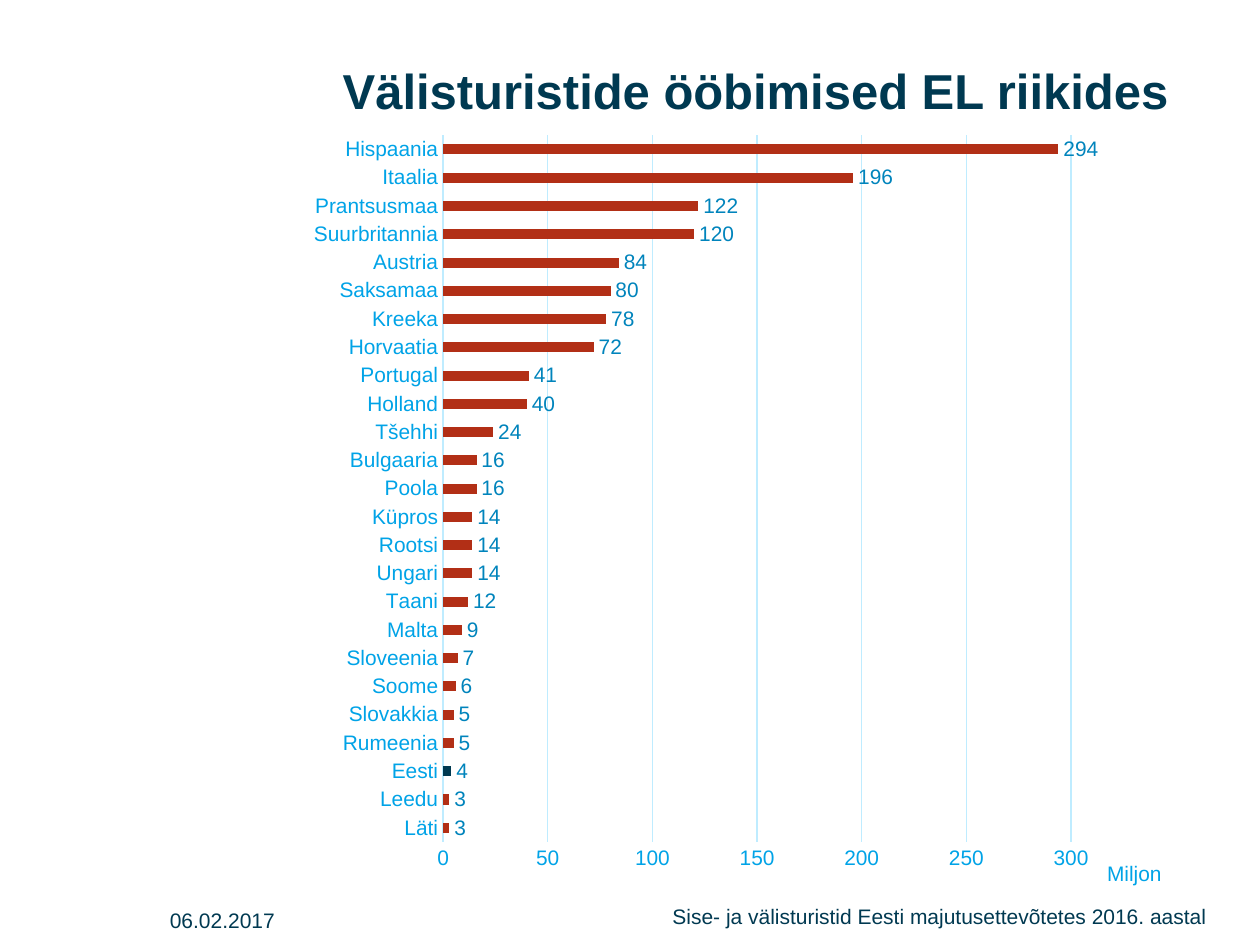
from lxml import etree
from pptx import Presentation
from pptx import util as u
from pptx.chart.data import CategoryChartData
from pptx.dml.color import RGBColor
from pptx.enum import chart as ch, text
from pptx.oxml.ns import nsdecls, qn
from pptx.oxml import parse_xml

NAVY = RGBColor(0x00, 0x39, 0x51)
SKY = RGBColor(0x00, 0xA3, 0xE7)
BLUE = RGBColor(0x00, 0x84, 0xBC)
PALE = RGBColor(0xBF, 0xEC, 0xFF)
RUST = RGBColor(0xB2, 0x2F, 0x16)

NIGHTS = {
    "Läti": 3, "Leedu": 3, "Eesti": 4, "Rumeenia": 5, "Slovakkia": 5,
    "Soome": 6, "Sloveenia": 7, "Malta": 9, "Taani": 12, "Ungari": 14,
    "Rootsi": 14, "Küpros": 14, "Poola": 16, "Bulgaaria": 16, "Tšehhi": 24,
    "Holland": 40, "Portugal": 41, "Horvaatia": 72, "Kreeka": 78,
    "Saksamaa": 80, "Austria": 84, "Suurbritannia": 120, "Prantsusmaa": 122,
    "Itaalia": 196, "Hispaania": 294,
}
HIGHLIGHT = "Eesti"


def set_all(obj, **values):
    for name, value in values.items():
        setattr(obj, name, value)


def manual_layout(x, y, w=None, h=None):
    """Return a c:layout element with positions as fractions of the chart."""
    target = '<c:layoutTarget val="inner"/>' if w else ""
    size = f'<c:w val="{w}"/><c:h val="{h}"/>' if w else ""
    return parse_xml(
        f'<c:layout {nsdecls("c")}><c:manualLayout>{target}'
        '<c:xMode val="edge"/><c:yMode val="edge"/>'
        f'<c:x val="{x}"/><c:y val="{y}"/>{size}</c:manualLayout></c:layout>')


def replace_layout(parent, layout):
    for old in parent.findall(qn("c:layout")):
        parent.remove(old)
    tx = parent.find(qn("c:tx"))
    if tx is not None:
        tx.addnext(layout)
    else:
        parent.insert(0, layout)


class Deck:
    font = "Arial"

    def __init__(self):
        self.prs = Presentation()
        set_all(self.prs, slide_width=u.Inches(10), slide_height=u.Inches(7.5))
        self.s = self.prs.slides.add_slide(self.prs.slide_layouts[5])

    def style(self, font, size, color, bold=False):
        set_all(font, name=self.font, size=u.Pt(size), bold=bold)
        font.color.rgb = color

    def fill_text(self, sp, words, box, size, bold=False, inset=0.0,
                  anchor=text.MSO_ANCHOR.MIDDLE, **paragraph):
        left, top, width, height = map(u.Inches, box)
        set_all(sp, left=left, top=top, width=width, height=height)
        tf = sp.text_frame
        side, edge = u.Inches(inset), u.Inches(inset / 2)
        set_all(tf, word_wrap=True, auto_size=text.MSO_AUTO_SIZE.NONE,
                vertical_anchor=anchor, margin_left=side, margin_right=side,
                margin_top=edge, margin_bottom=edge)
        p = tf.paragraphs[0]
        set_all(p, **{"alignment": text.PP_ALIGN.LEFT, **paragraph})
        r = p.add_run()
        r.text = words
        self.style(r.font, size, NAVY, bold)

    def title(self, words, box):
        self.fill_text(self.s.shapes.title, words, box, 28, bold=True)

    def label(self, words, box, **options):
        sp = self.s.shapes.add_textbox(*map(u.Inches, box))
        self.fill_text(sp, words, box, 12, **options)

    def bar_chart(self, values, box, unit):
        data = CategoryChartData(number_format="0")
        data.categories = list(values)
        data.add_series("Series 1", list(values.values()))
        chart = self.s.shapes.add_chart(
            ch.XL_CHART_TYPE.BAR_CLUSTERED, *map(u.Inches, box), data).chart
        set_all(chart, has_legend=False, has_title=False)
        self.style(chart.font, 10, NAVY)
        replace_layout(chart._chartSpace.chart.plotArea,
                       manual_layout(0.243, 0.025, 0.663, 0.906))
        self.bars(chart.plots[0], list(values).index(HIGHLIGHT))
        self.axes(chart, unit)

    def bars(self, plot, highlight):
        set_all(plot, gap_width=182, vary_by_categories=False,
                has_data_labels=True)
        series = plot.series[0]
        series.invert_if_negative = False
        for part, color in ((series, RUST), (series.points[highlight], NAVY)):
            part.format.fill.solid()
            part.format.fill.fore_color.rgb = color
        labels = plot.data_labels
        set_all(labels, show_value=True, number_format="0",
                number_format_is_linked=False,
                position=ch.XL_LABEL_POSITION.OUTSIDE_END)
        self.style(labels.font, 12, BLUE)

    def axes(self, chart, unit):
        cat, val = chart.category_axis, chart.value_axis
        for axis in (cat, val):
            set_all(axis, major_tick_mark=ch.XL_TICK_MARK.NONE,
                    minor_tick_mark=ch.XL_TICK_MARK.NONE)
            self.style(axis.tick_labels.font, 12, SKY)
        set_all(val, minimum_scale=0, maximum_scale=300, major_unit=50,
                has_major_gridlines=True)
        set_all(val.tick_labels, number_format="0",
                number_format_is_linked=False)
        val.format.line.fill.background()
        for line in (cat.format.line, val.major_gridlines.format.line):
            line.color.rgb = PALE
            line.width = u.Pt(0.75)

        title = cat.axis_title
        tf = title.text_frame
        tf.text = unit
        self.style(tf.paragraphs[0].runs[0].font, 12, SKY)
        body = next(title._element.iter(qn("a:bodyPr")))
        for name, value in {"rot": "0", "vert": "horz"}.items():
            body.set(name, value)
        replace_layout(title._element, manual_layout(0.94, 0.95))


def main():
    deck = Deck()
    deck.title("Välisturistide ööbimised EL riikides", (2.72, 0.36, 6.95, 0.71))
    deck.label("Sise- ja välisturistid Eesti majutusettevõtetes 2016. aastal",
               (4.61, 7.21, 4.97, 0.29), anchor=text.MSO_ANCHOR.TOP,
               alignment=text.PP_ALIGN.RIGHT, line_spacing=0.8)
    deck.label("06.02.2017", (1.25, 7.1, 2.33, 0.4), inset=0.1)
    deck.bar_chart(NIGHTS, (1.69, 0.92, 7.56, 6.19), "Miljon")
    deck.prs.save("out.pptx")


if __name__ == "__main__":
    main()
